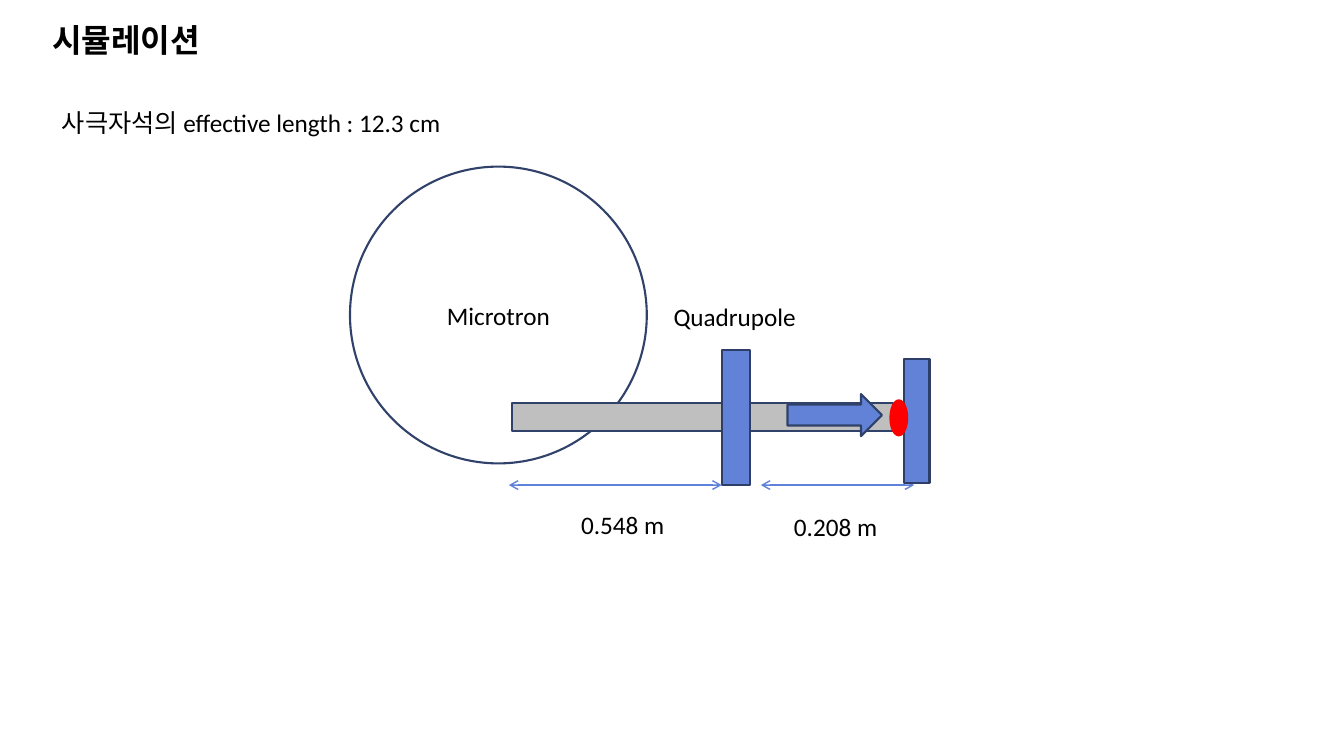
from dataclasses import dataclass

from lxml import etree
from pptx import Presentation
from pptx.dml.color import RGBColor
from pptx.enum.shapes import MSO_CONNECTOR, MSO_SHAPE
from pptx.enum.text import MSO_ANCHOR, MSO_AUTO_SIZE, PP_ALIGN
from pptx.oxml.ns import qn
from pptx.util import Pt

RECT, OVAL, ARROW = MSO_SHAPE.RECTANGLE, MSO_SHAPE.OVAL, MSO_SHAPE.RIGHT_ARROW
STRAIGHT = MSO_CONNECTOR.STRAIGHT
TOP, MIDDLE = MSO_ANCHOR.TOP, MSO_ANCHOR.MIDDLE
LEFT, CENTER = PP_ALIGN.LEFT, PP_ALIGN.CENTER
NO_AUTOFIT = MSO_AUTO_SIZE.NONE


@dataclass(frozen=True)
class Theme:
    font: str = "Calibri"
    title_size: float = 23
    body_size: float = 18
    outline: float = 1.5
    dimension_width: float = 1
    text: str = "000000"
    edge: str = "30416A"
    magnet: str = "6182D6"
    magnet_edge: str = "2E3E67"
    pipe: str = "BFBFBF"
    dimension: str = "5E81D9"
    beam: str = "FF0000"


THEME = Theme()


def rgb(value):
    return RGBColor.from_string(value)


def place(sp, left, top, width, height):
    sp.left, sp.top, sp.width, sp.height = Pt(left), Pt(top), Pt(width), Pt(height)


def write(sp, text, size=THEME.body_size, bold=False, align=LEFT, anchor=TOP, spacing=1.0):
    tf = sp.text_frame
    tf.word_wrap = True
    tf.auto_size = NO_AUTOFIT
    tf.vertical_anchor = anchor
    p = tf.paragraphs[0]
    p.alignment, p.line_spacing, p.space_before = align, spacing, Pt(0)
    r = p.add_run()
    r.text = text
    r.font.name, r.font.size, r.font.bold = THEME.font, Pt(size), bold
    r.font.color.rgb = rgb(THEME.text)


def add_part(slide, kind, left, top, width, height, fill=None, line=THEME.edge):
    sp = slide.shapes.add_shape(kind, Pt(left), Pt(top), Pt(width), Pt(height))
    sp.shadow.inherit = False
    if fill:
        sp.fill.solid()
        sp.fill.fore_color.rgb = rgb(fill)
    else:
        sp.fill.background()
    sp.line.color.rgb = rgb(line)
    sp.line.width = Pt(THEME.outline)
    return sp


def add_label(slide, text, left, top, width, height=29):
    sp = slide.shapes.add_textbox(Pt(left), Pt(top), Pt(width), Pt(height))
    write(sp, text)


def add_dimension(slide, start, end, y):
    """Draw a horizontal line with an open arrowhead at both ends."""
    line = slide.shapes.add_connector(STRAIGHT, Pt(start), Pt(y), Pt(end), Pt(y))
    line.line.color.rgb = rgb(THEME.dimension)
    line.line.width = Pt(THEME.dimension_width)
    ln = line.line._get_or_add_ln()
    for tag in ("a:headEnd", "a:tailEnd"):
        etree.SubElement(ln, qn(tag), type="arrow")
    etree.SubElement(line._element.spPr, qn("a:effectLst"))


def add_heading(slide, left, top, width):
    title, body = slide.placeholders[0], slide.placeholders[1]
    place(title, left, top, width, 34.5)
    write(title, "시뮬레이션", size=THEME.title_size, bold=True)

    place(body, left + 7, top + 51, width + 32, 39)
    write(body, "사극자석의 effective length : 12.3 cm", spacing=1.5)
    pPr = body.text_frame.paragraphs[0]._p.get_or_add_pPr()
    pPr.set("marL", "0")
    pPr.set("indent", "0")
    etree.SubElement(pPr, qn("a:buNone"))


def add_beamline(slide, left, top):
    """Draw the microtron, its beam pipe, the quadrupole and the screen."""
    microtron = add_part(slide, OVAL, left, top, 212, 212)
    write(microtron, "Microtron", align=CENTER, anchor=MIDDLE)
    add_part(slide, RECT, left + 116, top + 169, 272, 20, THEME.pipe)
    add_part(slide, RECT, left + 266, top + 131, 20, 96.5, THEME.magnet, THEME.magnet_edge)

    for text, start, end, x, y, width in (
        ("0.548 m", 113.5, 265.5, 158, 241, 81.5),
        ("0.208 m", 293.5, 403, 310, 243, 90),
    ):
        add_dimension(slide, left + start, left + end, top + 227.5)
        add_label(slide, text, left + x, top + y, width)

    add_part(slide, RECT, left + 396, top + 137.5, 18, 88.5, THEME.magnet, THEME.magnet_edge)
    add_part(slide, ARROW, left + 312.5, top + 162.5, 67.5, 30, THEME.magnet)
    add_part(slide, OVAL, left + 386, top + 167, 12, 25, THEME.beam, THEME.beam)
    add_label(slide, "Quadrupole", left + 224, top + 92.5, 104)


def main():
    prs = Presentation()
    prs.slide_width, prs.slide_height = Pt(960), Pt(540)
    slide = prs.slides.add_slide(prs.slide_layouts[1])
    add_heading(slide, 30, 11, 853)
    add_beamline(slide, 250, 119)
    prs.save("out.pptx")


if __name__ == "__main__":
    main()
